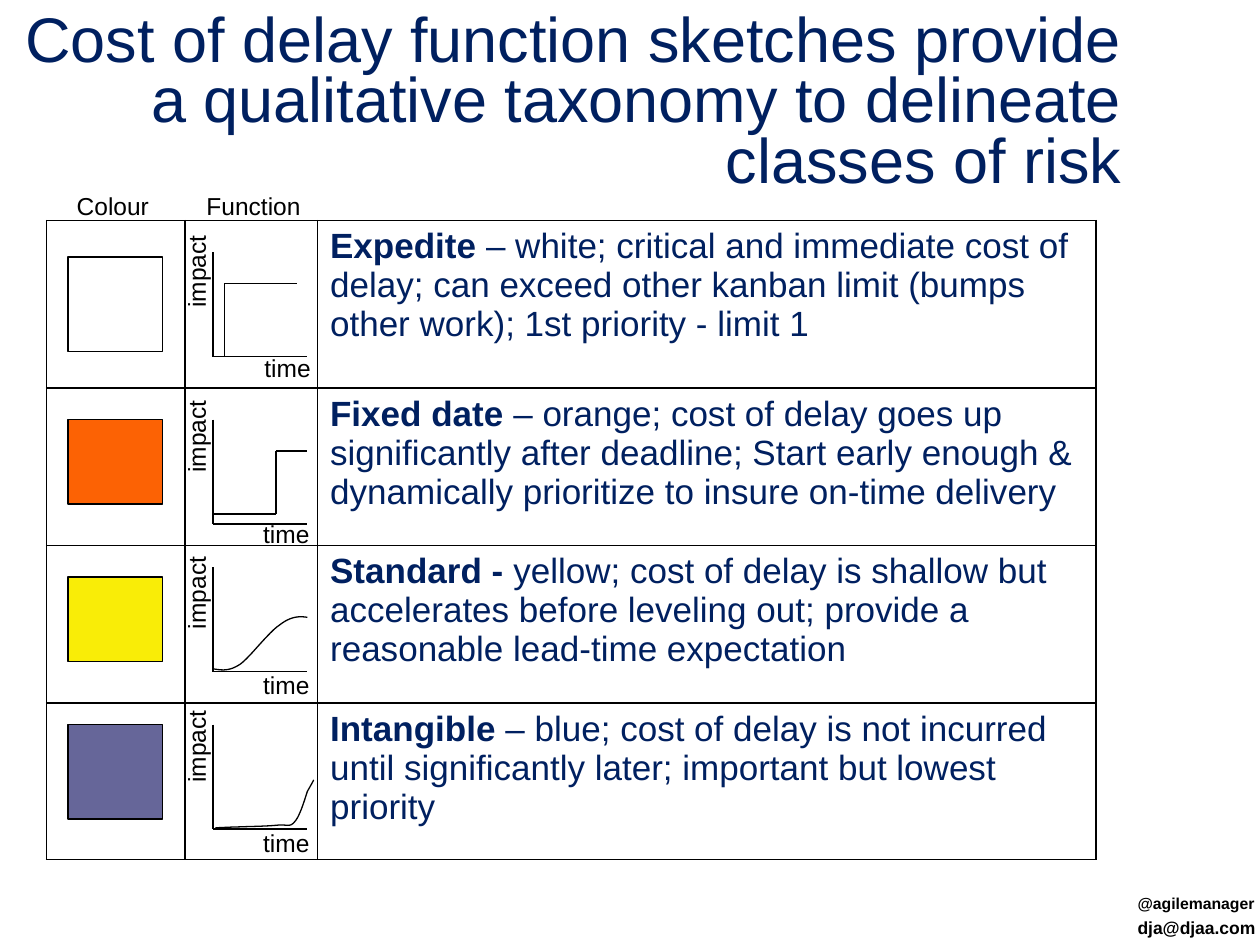
"""Build the cost of delay slide: a table of risk classes with swatches and function sketches."""
from lxml import etree
from pptx import Presentation
from pptx.dml.color import RGBColor
from pptx.enum import shapes, text
from pptx.oxml import ns
from pptx.util import Inches, Pt

THEME = dict(font="Arial", navy="002060", black="000000", title=36, body=20,
             label=14, line=0.75, border=1)
TITLE = ("Cost of delay function sketches provide a qualitative taxonomy "
         "to delineate classes of risk")
CLASSES = [
    dict(name="Expedite", detail=" – white; critical and immediate cost of delay; can exceed "
         "other kanban limit (bumps other work); 1st priority - limit 1",
         height=1.33, fill="FFFFFF", swatch=(2.04, 0.75), axis=2, impact=1.98, time=(2, 2.75),
         steps=[(1.78, 2.83), (1.78, 2.25), (2.36, 2.25)]),
    dict(name="Fixed date", detail=" – orange; cost of delay goes up significantly after deadline; "
         "Start early enough & dynamically prioritize to insure on-time delivery",
         height=1.25, fill="FC6204", swatch=(3.33, 0.67), axis=3.33, impact=3.29, time=(1.99, 4.07),
         steps=[(1.69, 4.08), (2.19, 4.08), (2.19, 3.58), (2.44, 3.58)]),
    dict(name="Standard - ", detail="yellow; cost of delay is shallow but accelerates before "
         "leveling out; provide a reasonable lead-time expectation",
         height=1.25, fill="F9ED07", swatch=(4.58, 0.67), axis=4.5, impact=4.53, time=(1.99, 5.27),
         curve=[(1.7, 5.31), (1.76, 5.32), (1.82, 5.33), (1.91, 5.27), (1.99, 5.21),
                (2.13, 5.02), (2.22, 4.96), (2.31, 4.89), (2.38, 4.89), (2.44, 4.9)]),
    dict(name="Intangible", detail=" – blue; cost of delay is not incurred until significantly "
         "later; important but lowest priority",
         height=1.24, fill="666699", swatch=(5.75, 0.75), axis=5.75, impact=5.75, time=(1.99, 6.52),
         curve=[(1.71, 6.57), (1.9, 6.56), (2.08, 6.56), (2.19, 6.55), (2.29, 6.54),
                (2.3, 6.57), (2.34, 6.52), (2.38, 6.48), (2.42, 6.34), (2.44, 6.28),
                (2.47, 6.23), (2.49, 6.19), (2.49, 6.19)]),
]
HEADINGS = [("Colour", 0.51, 0.78), ("Function", 1.54, 0.95)]
CONTACTS = [("dja@djaa.com", 7.23, 1.15, 0.27, 10), ("@agilemanager", 7.04, 1.14, 0.25, 9)]
TABLE_LEFT, TABLE_TOP, COLUMNS = 0.37, 1.75, (1.1, 1.05, 6.18)
AXIS_LEFT, AXIS_WIDTH, AXIS_HEIGHT = 1.69, 0.75, 0.83
SWATCH_LEFT, SWATCH_WIDTH, LABEL_HEIGHT = 0.54, 0.75, 0.34


def rgb(key):
    return RGBColor.from_string(THEME.get(key, key))


def add_run(p, content, size, color="black", bold=False):
    r = p.add_run()
    r.text = content
    for key, value in dict(name=THEME["font"], size=Pt(size), bold=bold).items():
        setattr(r.font, key, value)
    r.font.color.rgb = rgb(color)


def add_label(s, content, box, size=THEME["label"], bold=False, rotation=0):
    sp = s.shapes.add_textbox(*map(Inches, box))
    sp.rotation = rotation
    sp.text_frame.word_wrap = False
    add_run(sp.text_frame.paragraphs[0], content, size, bold=bold)


def set_line(sp):
    sp.line.color.rgb = rgb("black")
    sp.line.width = Pt(THEME["line"])


def add_segments(s, points):
    for start, end in zip(points, points[1:]):
        line = s.shapes.add_connector(shapes.MSO_CONNECTOR.STRAIGHT, *map(Inches, start + end))
        set_line(line)
        etree.SubElement(line._element.spPr, ns.qn("a:effectLst"))


def bezier(controls, steps=12):
    points = [controls[0]]
    for i in range(0, len(controls) - 1, 3):
        for n in range(1, steps + 1):
            t = n / steps
            weights = ((1 - t) ** 3, 3 * t * (1 - t) ** 2, 3 * t * t * (1 - t), t ** 3)
            points.append(tuple(sum(w * c[k] for w, c in zip(weights, controls[i:i + 4]))
                                for k in (0, 1)))
    return points


def add_curve(s, controls):
    points = [(Inches(x), Inches(y)) for x, y in bezier(controls)]
    builder = s.shapes.build_freeform(*points[0])
    builder.add_line_segments(points[1:], close=False)
    sp = builder.convert_to_shape()
    sp.shadow.inherit = False
    sp.fill.background()
    set_line(sp)


def add_borders(cell):
    tcPr = cell._tc.get_or_add_tcPr()
    for i, side in enumerate(("lnL", "lnR", "lnT", "lnB")):
        ln = etree.Element(ns.qn(f"a:{side}"), w=str(Pt(THEME["border"])))
        fill = etree.SubElement(ln, ns.qn("a:solidFill"))
        etree.SubElement(fill, ns.qn("a:srgbClr"), val=THEME["black"])
        tcPr.insert(i, ln)


def add_class_table(s):
    heights = [c["height"] for c in CLASSES]
    table = s.shapes.add_table(len(CLASSES), len(COLUMNS), *map(
        Inches, (TABLE_LEFT, TABLE_TOP, sum(COLUMNS), sum(heights)))).table
    table.first_row = table.horz_banding = False
    for column, width in zip(table.columns, COLUMNS):
        column.width = Inches(width)
    for row, height, risk in zip(table.rows, heights, CLASSES):
        row.height = Inches(height)
        for cell in row.cells:
            cell.fill.background()
            add_borders(cell)
        p = row.cells[2].text_frame.paragraphs[0]
        add_run(p, risk["name"], THEME["body"], "navy", True)
        add_run(p, risk["detail"], THEME["body"], "navy")


def add_sketch(s, risk):
    top, height = risk["swatch"]
    sp = s.shapes.add_shape(shapes.MSO_SHAPE.RECTANGLE, *map(
        Inches, (SWATCH_LEFT, top, SWATCH_WIDTH, height)))
    sp.shadow.inherit = False
    sp.fill.solid()
    sp.fill.fore_color.rgb = rgb(risk["fill"])
    set_line(sp)
    base = risk["axis"] + AXIS_HEIGHT
    add_segments(s, [(AXIS_LEFT, risk["axis"]), (AXIS_LEFT, base), (AXIS_LEFT + AXIS_WIDTH, base)])
    if "steps" in risk:
        add_segments(s, risk["steps"])
    else:
        add_curve(s, risk["curve"])
    add_label(s, "time", (*risk["time"], 0.57, LABEL_HEIGHT))
    add_label(s, "impact", (1.17, risk["impact"], 0.78, LABEL_HEIGHT), rotation=270)


def add_title(s):
    sp = s.shapes.title
    for key, value in zip(("left", "top", "width", "height"), (0, 0.05, 9, 1.56)):
        setattr(sp, key, Inches(value))
    tf = sp.text_frame
    for key, value in dict(word_wrap=True, auto_size=text.MSO_AUTO_SIZE.NONE,
                           vertical_anchor=text.MSO_ANCHOR.MIDDLE).items():
        setattr(tf, key, value)
    p = tf.paragraphs[0]
    p.alignment, p.line_spacing = text.PP_ALIGN.RIGHT, 0.8
    add_run(p, TITLE, THEME["title"], "navy")


def main():
    prs = Presentation()
    prs.slide_width, prs.slide_height = Inches(10), Inches(7.5)
    s = prs.slides.add_slide(prs.slide_layouts[5])
    add_title(s)
    for content, top, width, height, size in CONTACTS:
        add_label(s, content, (8.93, top, width, height), size, True)
    add_class_table(s)
    for risk in CLASSES:
        add_sketch(s, risk)
    for content, left, width in HEADINGS:
        add_label(s, content, (left, 1.47, width, LABEL_HEIGHT))
    prs.save("out.pptx")


if __name__ == "__main__":
    main()
